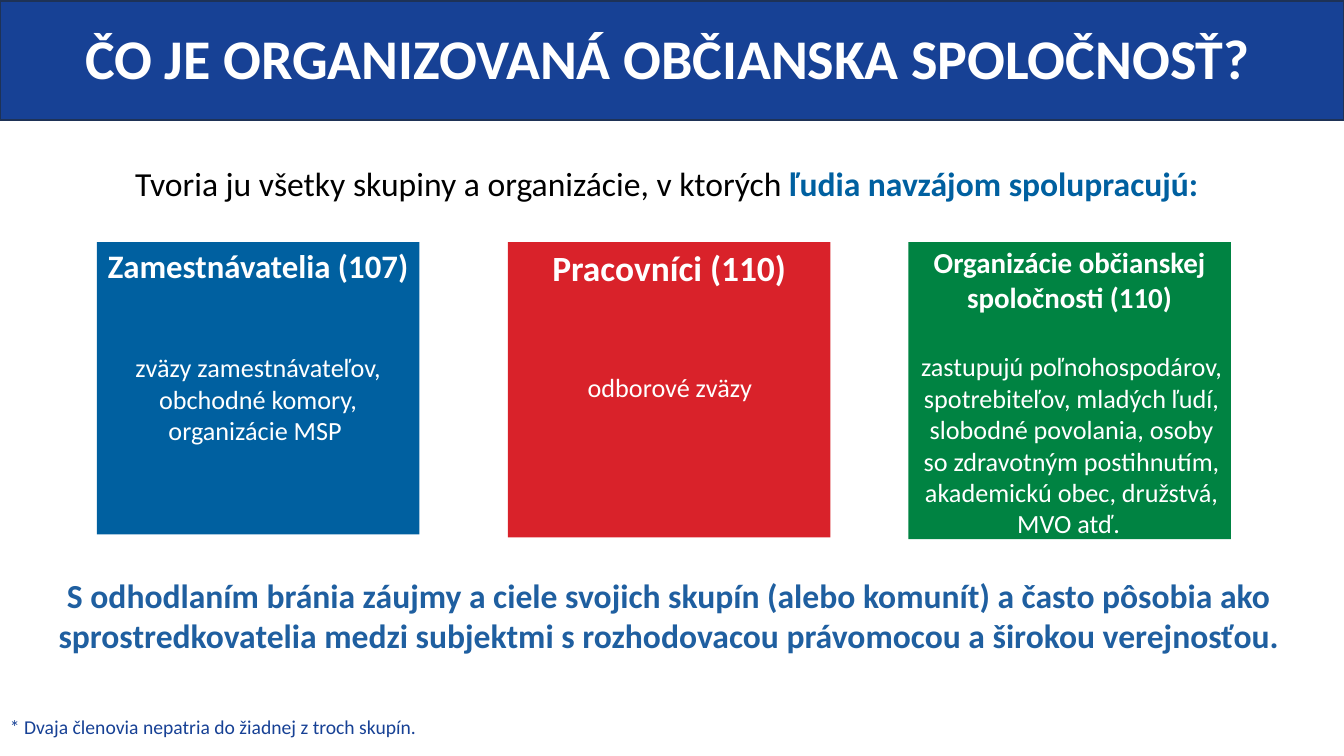
from pptx import Presentation
from pptx import util as u
from pptx.dml.color import RGBColor
from pptx.enum import shapes, text
from dataclasses import dataclass

TITLE = "ČO JE ORGANIZOVANÁ OBČIANSKA SPOLOČNOSŤ?"
INTRO = "Tvoria ju všetky skupiny a organizácie, v ktorých "
INTRO_KEY = "ľudia navzájom spolupracujú:"
GROUPS = [
    dict(left=2.44, height=7.37, color="0060A0",
         heading="Zamestnávatelia (107)", heading_size=23.4,
         heading_top=6.07, heading_height=1.37,
         lines=["zväzy zamestnávateľov,", "obchodné komory,", "organizácie MSP "],
         body_box=(2.44, 8.74, 8.13, 3.45)),
    dict(left=12.8, height=7.44, color="D9222A",
         heading="Pracovníci (110)", heading_size=25.3,
         heading_top=6.07, heading_height=1.37,
         lines=["odborové zväzy"],
         body_box=(12.83, 9.22, 8.1, 1.07)),
    dict(left=22.89, height=7.49, color="008342",
         heading="Organizácie občianskej spoločnosti (110)", heading_size=20.7,
         heading_top=6.05, heading_height=2.18,
         lines=["zastupujú poľnohospodárov, spotrebiteľov, mladých ľudí, "
                "slobodné povolania, osoby so zdravotným postihnutím, "
                "akademickú obec, družstvá, MVO atď. "],
         body_box=(22.89, 8.71, 8.23, 5.05)),
]
CONCLUSION = ("S odhodlaním bránia záujmy a ciele svojich skupín (alebo komunít) "
              "a často pôsobia ako sprostredkovatelia medzi subjektmi "
              "s rozhodovacou právomocou a širokou verejnosťou.")
FOOTNOTE = "* Dvaja členovia nepatria do žiadnej z troch skupín."


@dataclass(frozen=True)
class Theme:
    font: str = "Calibri"
    white: str = "FFFFFF"
    black: str = "000000"
    key: str = "0060A0"
    conclusion: str = "1F5FA0"
    banner: str = "174195"
    banner_line: str = "1E3256"
    title_size: float = 40
    lead_size: float = 24
    body_size: float = 18.7
    note_size: float = 14


THEME = Theme()
SLIDE_WIDTH, SLIDE_HEIGHT = 33.87, 19.05
CARD_TOP, CARD_WIDTH = 6.1, 8.13
CENTER, LEFT = text.PP_ALIGN.CENTER, text.PP_ALIGN.LEFT


def apply(target, values):
    for name, value in values.items():
        setattr(target, name, value)


def place(shape, box):
    apply(shape, dict(zip(("left", "top", "width", "height"), map(u.Cm, box))))


def write(shape, paragraphs, align=CENTER, spacing=1.0):
    frame = shape.text_frame
    apply(frame, dict(word_wrap=True, auto_size=text.MSO_AUTO_SIZE.NONE,
                      vertical_anchor=text.MSO_ANCHOR.TOP))
    for index, spans in enumerate(paragraphs):
        para = frame.add_paragraph() if index else frame.paragraphs[0]
        apply(para, dict(alignment=align, line_spacing=spacing))
        for words, size, color, bold in spans:
            span = para.add_run()
            span.text = words
            apply(span.font, dict(name=THEME.font, size=u.Pt(size), bold=bold))
            span.font.color.rgb = RGBColor.from_string(color)


def add_text(page, box, paragraphs, **options):
    shape = page.shapes.add_textbox(*map(u.Cm, box))
    write(shape, paragraphs, **options)
    return shape


def add_panel(page, box, color, line=None):
    shape = page.shapes.add_shape(shapes.MSO_SHAPE.RECTANGLE, *map(u.Cm, box))
    shape.shadow.inherit = False
    shape.fill.solid()
    shape.fill.fore_color.rgb = RGBColor.from_string(color)
    if line:
        shape.line.color.rgb = RGBColor.from_string(line)
        shape.line.width = u.Pt(1)
    else:
        shape.line.fill.background()
    return shape


def main():
    deck = Presentation()
    apply(deck, dict(slide_width=u.Cm(SLIDE_WIDTH), slide_height=u.Cm(SLIDE_HEIGHT)))
    page = deck.slides.add_slide(deck.slide_layouts.get_by_name("Title Only"))

    add_text(page, (-0.13, 4.09, SLIDE_WIDTH, 1.45),
             [[(INTRO, THEME.lead_size, THEME.black, False),
               (INTRO_KEY, THEME.lead_size, THEME.key, True)]], spacing=0.9)

    for group in GROUPS:
        add_panel(page, (group["left"], CARD_TOP, CARD_WIDTH, group["height"]),
                  group["color"])
        add_text(page, (group["left"], group["heading_top"], CARD_WIDTH,
                        group["heading_height"]),
                 [[(group["heading"], group["heading_size"], THEME.white, True)]])
        add_text(page, group["body_box"],
                 [[(line, THEME.body_size, THEME.white, False)]
                  for line in group["lines"]])

    conclusion = add_text(page, (0.89, 14.3, 31.93, 4.04),
                          [[(CONCLUSION, THEME.lead_size, THEME.conclusion, True)]])
    apply(conclusion.text_frame,
          dict(margin_left=u.Cm(0.33), margin_right=u.Cm(0.33),
               margin_top=u.Cm(0.18), margin_bottom=u.Cm(0.18)))

    banner = add_panel(page, (0, 0.03, SLIDE_WIDTH, 3), THEME.banner, THEME.banner_line)
    title = page.shapes.title
    place(title, (-0.23, 0.46, 34.11, 2.97))
    write(title, [[(TITLE, THEME.title_size, THEME.white, True)]])
    banner.element.addnext(title.element)

    add_text(page, (0, 17.88, 23.72, 0.86),
             [[(FOOTNOTE, THEME.note_size, THEME.banner, False)]], align=LEFT)
    deck.save("out.pptx")


if __name__ == "__main__":
    main()
